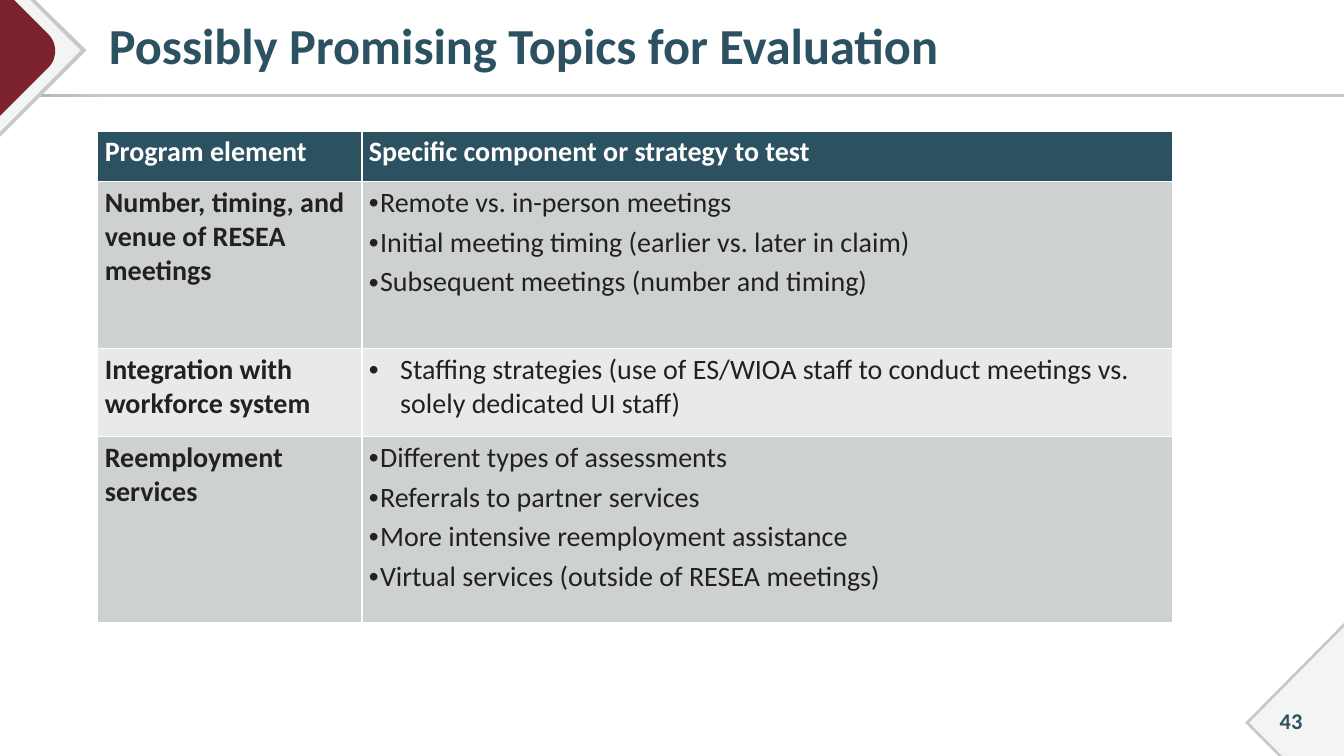
"""Builds the slide on promising evaluation topics."""
from dataclasses import dataclass

from lxml import etree
from pptx import Presentation
from pptx.dml.color import RGBColor
from pptx.enum.shapes import MSO_SHAPE
from pptx.enum.text import MSO_ANCHOR, PP_ALIGN
from pptx.oxml.ns import qn
from pptx.util import Inches, Pt

TITLE = "Possibly Promising Topics for Evaluation"
PAGE = "43"
HEADER = ("Program element", "Specific component or strategy to test")
TOPICS = [
    ("Number, timing, and venue of RESEA meetings", 0.11, [
        "Remote vs. in-person meetings",
        "Initial meeting timing (earlier vs. later in claim)",
        "Subsequent meetings (number and timing)"]),
    ("Integration with workforce system", 0.31, [
        "Staffing strategies (use of ES/WIOA staff to conduct meetings vs. "
        "solely dedicated UI staff)"]),
    ("Reemployment services", 0.11, [
        "Different types of assessments",
        "Referrals to partner services",
        "More intensive reemployment assistance",
        "Virtual services (outside of RESEA meetings)"]),
]
COL_WIDTHS = (2.62, 8.04)
ROW_HEIGHTS = (0.5, 1.66, 0.87, 1.85)
HANGING = 0.31

RECT = MSO_SHAPE.RECTANGLE
MIDDLE = MSO_ANCHOR.MIDDLE
LEFT, CENTER = PP_ALIGN.LEFT, PP_ALIGN.CENTER


@dataclass(frozen=True)
class Theme:
    font: str = "Calibri"
    teal: str = "2C5261"
    white: str = "FFFFFF"
    ink: str = "242021"
    red: str = "7A232F"
    rule_dark: str = "ABABA8"
    rule: str = "C8C8C6"
    pale: str = "F3F4F4"
    bands: tuple = ("CDD1D2", "E8E9EA")
    title_size: int = 36
    table_size: int = 20
    page_size: int = 16


THEME = Theme()


def bezier(a, b, c, d, steps=12):
    """Return points along a cubic curve."""
    points = []
    for i in range(steps + 1):
        t = i / steps
        u = 1 - t
        weights = (u ** 3, 3 * u * u * t, 3 * u * t * t, t ** 3)
        points.append(tuple(sum(w * q[k] for w, q in zip(weights, (a, b, c, d)))
                            for k in (0, 1)))
    return points


ROUNDED_TIP = bezier((0.48, 0.34), (0.57, 0.43), (0.57, 0.58), (0.48, 0.67))
CORNERS = [
    (THEME.rule, [(0, 0), (0.35, 0), (0.86, 0.5), (0, 1.36)]),
    (THEME.pale, [(0, 0), (0.3, 0), (0.8, 0.5), (0, 1.31)]),
    (THEME.red, [(0, 0), (0.14, 0), *ROUNDED_TIP, (0, 1.15)]),
    (THEME.rule, [(13.33, 6.18), (13.33, 7.5), (12.68, 7.5), (12.35, 7.17)]),
    (THEME.pale, [(13.33, 6.22), (13.33, 7.5), (12.72, 7.5), (12.39, 7.17)]),
]


def add_run(p, text, size, color, bold=False):
    """Add one formatted run to a paragraph."""
    r = p.add_run()
    r.text = text
    r.font.name = THEME.font
    r.font.size = Pt(size)
    r.font.bold = bold
    r.font.color.rgb = RGBColor.from_string(color)


def add_bullet(p, left):
    """Give a paragraph a hanging bullet."""
    pPr = p._p.get_or_add_pPr()
    pPr.set("marL", str(Inches(left)))
    pPr.set("indent", str(-Inches(HANGING)))
    etree.SubElement(pPr, qn("a:buFont")).set("typeface", "Arial")
    etree.SubElement(pPr, qn("a:buChar")).set("char", "•")


def add_corner(s, color, points):
    """Draw one flat polygon of a corner ornament."""
    points = [(Inches(x), Inches(y)) for x, y in points]
    builder = s.shapes.build_freeform(*points[0])
    builder.add_line_segments(points[1:], close=True)
    sp = builder.convert_to_shape()
    sp.shadow.inherit = False
    sp.fill.solid()
    sp.fill.fore_color.rgb = RGBColor.from_string(color)
    sp.line.fill.background()


def add_rule(s):
    """Draw the shaded rule below the title."""
    sp = s.shapes.add_shape(RECT, 0, Inches(0.93), Inches(13.33), Inches(0.03))
    sp.shadow.inherit = False
    sp.line.fill.background()
    sp.fill.gradient()
    sp.fill.gradient_angle = 0
    stops = ((0, THEME.rule_dark), (0.08, THEME.rule))
    for stop, (position, color) in zip(sp.fill.gradient_stops, stops):
        stop.position = position
        stop.color.rgb = RGBColor.from_string(color)


def add_title(s):
    """Place and fill the title placeholder."""
    sp = s.shapes.title
    sp.left, sp.top = Inches(0.88), Inches(0.05)
    sp.width, sp.height = Inches(12.12), Inches(0.86)
    tf = sp.text_frame
    tf.vertical_anchor = MIDDLE
    tf.margin_left = Inches(0.2)
    p = tf.paragraphs[0]
    p.alignment = LEFT
    p.line_spacing = 0.9
    add_run(p, TITLE, THEME.title_size, THEME.teal, True)


def add_page_number(s):
    """Add the slide number in the lower corner."""
    sp = s.shapes.add_textbox(Inches(12.45), Inches(6.95), Inches(0.71), Inches(0.4))
    tf = sp.text_frame
    tf.word_wrap = True
    tf.vertical_anchor = MIDDLE
    p = tf.paragraphs[0]
    p.alignment = CENTER
    add_run(p, PAGE, THEME.page_size, THEME.teal, True)


def format_cell(cell, fill):
    """Fill a cell, set its margins and return its text frame."""
    cell.fill.solid()
    cell.fill.fore_color.rgb = RGBColor.from_string(fill)
    cell.margin_left = cell.margin_right = Inches(0.07)
    cell.margin_top = cell.margin_bottom = Inches(0.04)
    return cell.text_frame


def add_topics(s):
    """Build the table of program elements and strategies."""
    table = s.shapes.add_table(
        len(ROW_HEIGHTS), len(COL_WIDTHS), Inches(0.97), Inches(1.3),
        Inches(sum(COL_WIDTHS)), Inches(sum(ROW_HEIGHTS))).table
    for column, width in zip(table.columns, COL_WIDTHS):
        column.width = Inches(width)
    for row, height in zip(table.rows, ROW_HEIGHTS):
        row.height = Inches(height)
    for col, text in enumerate(HEADER):
        tf = format_cell(table.cell(0, col), THEME.teal)
        add_run(tf.paragraphs[0], text, THEME.table_size, THEME.white, True)
    for i, (element, indent, strategies) in enumerate(TOPICS):
        band = THEME.bands[i % 2]
        tf = format_cell(table.cell(i + 1, 0), band)
        add_run(tf.paragraphs[0], element, THEME.table_size, THEME.ink, True)
        tf = format_cell(table.cell(i + 1, 1), band)
        for n, strategy in enumerate(strategies):
            p = tf.add_paragraph() if n else tf.paragraphs[0]
            add_bullet(p, indent)
            if n < len(strategies) - 1:
                p.space_after = Pt(4)
            add_run(p, strategy, THEME.table_size, THEME.ink)


def main():
    """Assemble and save the slide."""
    prs = Presentation()
    prs.slide_width, prs.slide_height = Inches(13.33), Inches(7.5)
    s = prs.slides.add_slide(prs.slide_layouts[5])
    add_rule(s)
    for color, points in CORNERS:
        add_corner(s, color, points)
    add_page_number(s)
    add_title(s)
    add_topics(s)
    prs.save("out.pptx")


if __name__ == "__main__":
    main()
